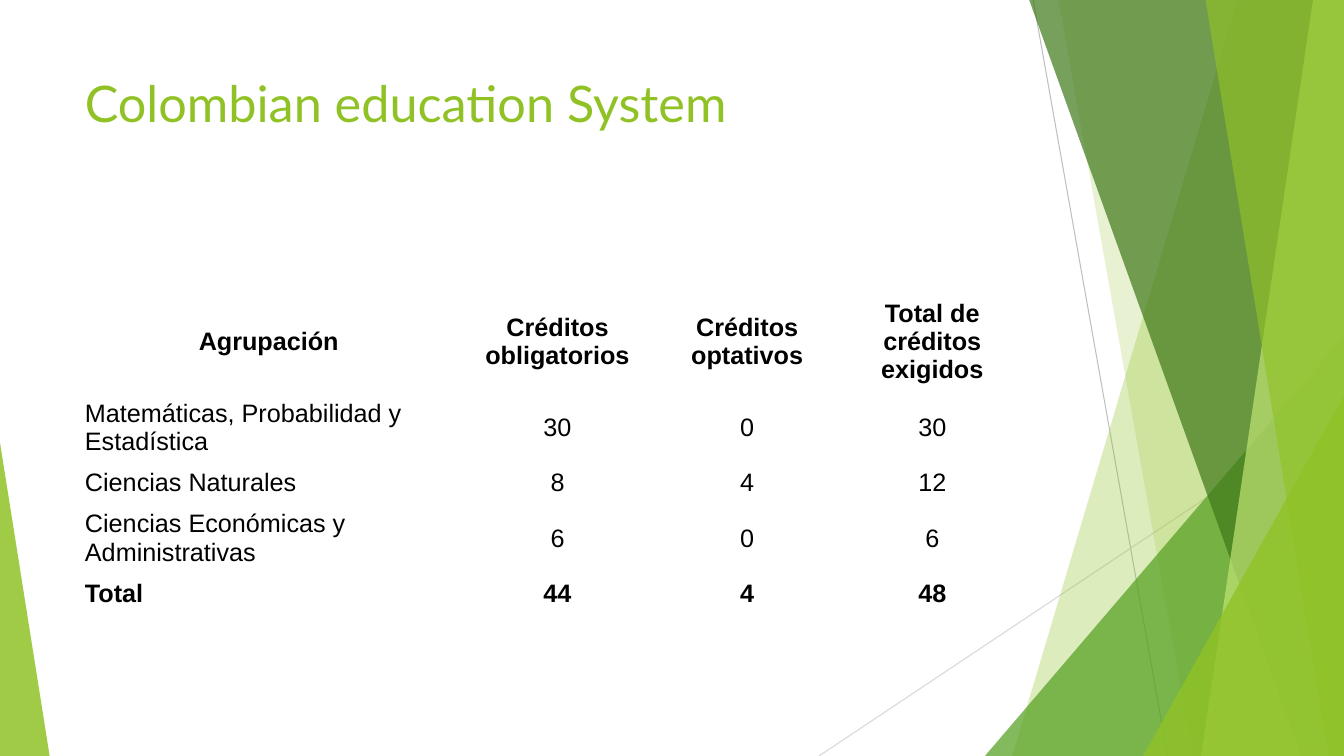
from lxml import etree
from pptx import Presentation
from pptx.dml.color import RGBColor
from pptx.enum.shapes import MSO_CONNECTOR, MSO_SHAPE
from pptx.enum.text import MSO_ANCHOR, PP_ALIGN
from pptx.oxml.ns import qn
from pptx.util import Pt

LINE = MSO_CONNECTOR.STRAIGHT
WEDGE = MSO_SHAPE.ISOSCELES_TRIANGLE
MIDDLE = MSO_ANCHOR.MIDDLE
TOP = MSO_ANCHOR.TOP
LEFT = PP_ALIGN.LEFT
CENTER = PP_ALIGN.CENTER

WIDE, HIGH = 960, 540
GREEN = "90C226"


def color(code):
    return RGBColor.from_string(code)


def paint(shape, code, alpha):
    shape.shadow.inherit = False
    shape.fill.solid()
    shape.fill.fore_color.rgb = color(code)
    tint = shape.fill._xPr.find(qn("a:solidFill"))[0]
    etree.SubElement(tint, qn("a:alpha")).set("val", str(alpha * 1000))
    shape.line.fill.background()


deck = Presentation()
deck.slide_width = Pt(WIDE)
deck.slide_height = Pt(HIGH)
slide = deck.slides.add_slide(deck.slide_layouts[6])
shapes = slide.shapes

rays = [
    (738, 0, 834, HIGH, "BFBFBF"),
    (WIDE, 290, 585, HIGH, "D9D9D9"),
]
for x1, y1, x2, y2, code in rays:
    ray = shapes.add_connector(LINE, Pt(x1), Pt(y1), Pt(x2), Pt(y2))
    ray.line.color.rgb = color(code)
    ray.line.width = Pt(0.75)
    etree.SubElement(ray._element.spPr, qn("a:effectLst"))

bands = [
    ("free", 884, 723, GREEN, 30),
    ("free", 756, 852, GREEN, 20),
    ("wedge", 703.5, 240, "54A021", 72),
    ("free", 735, 929.5, "3F7819", 70),
    ("free", 938, 858, "C0E474", 70),
    ("free", 861, 949, GREEN, 65),
    ("wedge", 816.5, 283, GREEN, 80),
]
for kind, a, b, code, alpha in bands:
    if kind == "free":
        pen = shapes.build_freeform(Pt(a), Pt(-0.5))
        pen.add_line_segments(
            [(Pt(WIDE), Pt(-0.5)), (Pt(WIDE), Pt(HIGH)), (Pt(b), Pt(HIGH))])
        band = pen.convert_to_shape()
    else:
        band = shapes.add_shape(WEDGE, Pt(a), Pt(b), Pt(WIDE - a), Pt(HIGH - b))
        band.adjustments[0] = 1
    paint(band, code, alpha)

edge = shapes.add_shape(WEDGE, Pt(0), Pt(316), Pt(35.5), Pt(224))
edge.adjustments[0] = 0
paint(edge, GREEN, 85)

title = shapes.add_textbox(Pt(53.5), Pt(48), Pt(677), Pt(104))
frame = title.text_frame
frame.word_wrap = True
frame.vertical_anchor = TOP
frame.text = "Colombian education System"
font = frame.paragraphs[0].runs[0].font
font.name = "Lato"
font.size = Pt(36)
font.color.rgb = color(GREEN)

rows = [
    ("Agrupación", "Créditos obligatorios", "Créditos optativos",
     "Total de créditos exigidos"),
    ("Matemáticas, Probabilidad y\nEstadística", "30", "0", "30"),
    ("Ciencias Naturales", "8", "4", "12"),
    ("Ciencias Económicas y Administrativas", "6", "0", "6"),
    ("Total", "44", "4", "48"),
]
widths = [277, 135.5, 135.5, 129]
heights = [68, 48, 27, 48, 27]
grid = shapes.add_table(len(rows), len(widths), Pt(53.5), Pt(208),
                        Pt(sum(widths)), Pt(sum(heights))).table
grid.first_row = False
grid.horz_banding = False
for col, width in zip(grid.columns, widths):
    col.width = Pt(width)
for r, row in enumerate(rows):
    grid.rows[r].height = Pt(heights[r])
    for c, text in enumerate(row):
        cell = grid.cell(r, c)
        cell.fill.background()
        cell.vertical_anchor = MIDDLE
        cell.text_frame.text = text
        for para in cell.text_frame.paragraphs:
            para.alignment = LEFT if c == 0 and r > 0 else CENTER
            font = para.runs[0].font
            font.name = "Arial"
            font.size = Pt(18)
            font.bold = r in (0, len(rows) - 1)
            font.color.rgb = color("000000")

deck.save("out.pptx")
